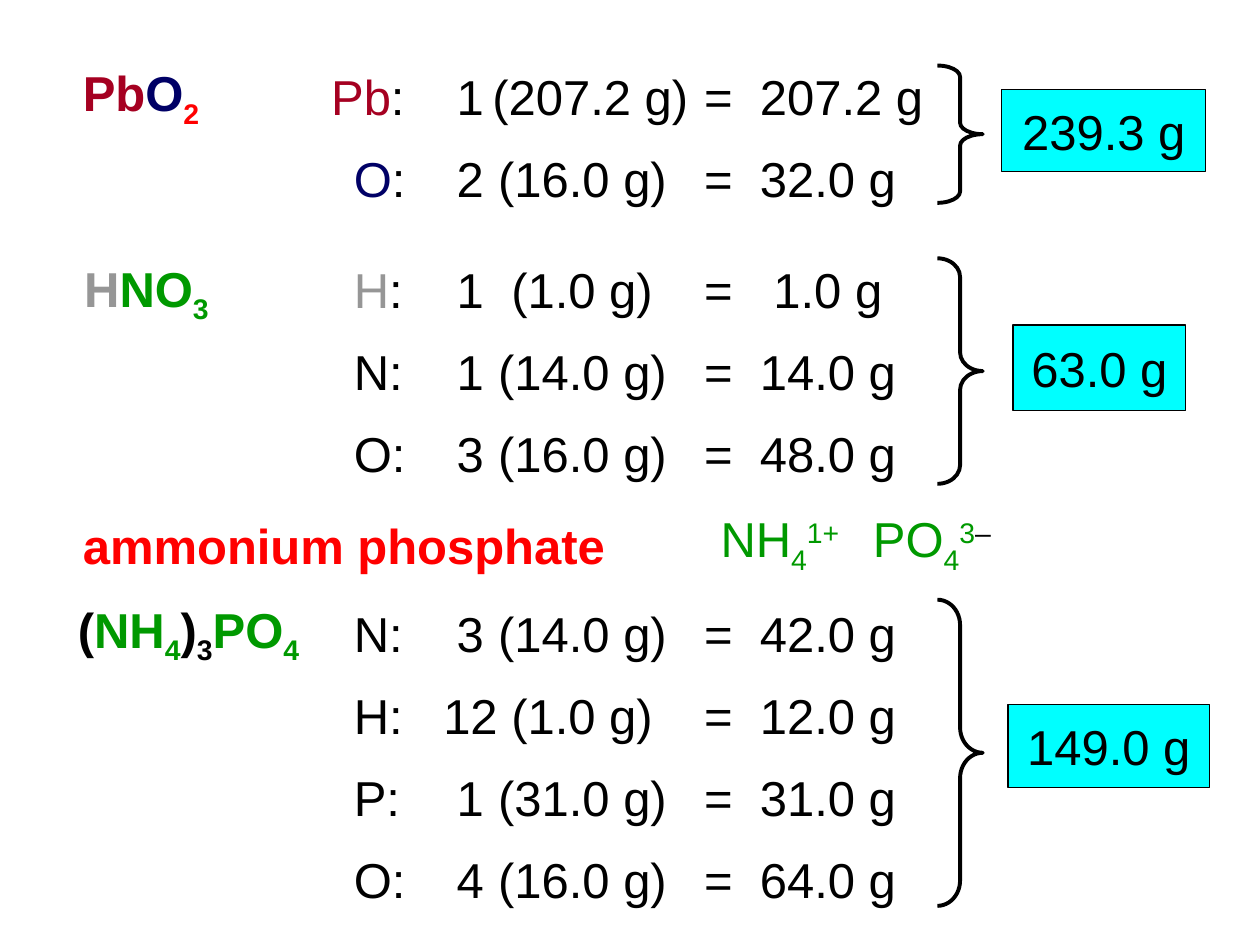
"""Build a slide that works out the molar masses of three compounds."""
from pptx import Presentation
from pptx.dml.color import RGBColor
from pptx.enum.shapes import MSO_SHAPE
from pptx.enum.text import MSO_ANCHOR, PP_ALIGN
from pptx.util import Inches, Pt

COLORS = {"black": "000000", "lead": "A50021", "oxygen": "000066", "red": "FF0000",
          "grey": "969696", "green": "009900", "cyan": "00FFFF"}
SUB, SUPER = -25, 30
ROW_PITCH, ROW_HEIGHT = 0.65, 0.57
CHAR = 0.21
LABEL_RIGHT, COUNT_CENTER, FACTOR_CENTER, FACTOR_MIN, RESULT_LEFT = 3.41, 3.79, 4.68, 3.81, 5.49
BRACE_LEFT, BRACE_WIDTH = 7.44, 0.36

COMPOUNDS = [
    {"formula": [("Pb", "lead"), ("O", "oxygen"), ("2", "red", SUB)],
     "formula_box": (0.56, 0.48, 1.26), "top": 0.48,
     "rows": [([("Pb", "lead"), (":", "black")], "1", "(207.2 g)", "=  207.2 g"),
              ([("O", "oxygen"), (":", "black")], "2", "(16.0 g)", "=  32.0 g")],
     "brace": (0.52, 1.09, 0.252),
     "total": "239.3 g", "total_box": (7.95, 0.71, 1.62, 0.65)},
    {"formula": [("H", "grey"), ("NO", "green"), ("3", "green", SUB)],
     "formula_box": (0.57, 2.03, 1.32), "top": 2.01,
     "rows": [([("H", "grey"), (":", "black")], "1", "(1.0 g)", "=   1.0 g"),
              ([("N:", "black")], "1", "(14.0 g)", "=  14.0 g"),
              ([("O:", "black")], "3", "(16.0 g)", "=  48.0 g")],
     "brace": (2.05, 1.79, 0.413),
     "total": "63.0 g", "total_box": (8.04, 2.58, 1.37, 0.68)},
    {"formula": [("(", "black"), ("NH", "green"), ("4", "green", SUB), (")", "black"),
                 ("3", "black", SUB), ("PO", "green"), ("4", "green", SUB)],
     "formula_box": (0.52, 4.74, 2.27), "top": 4.74,
     "rows": [([("N:", "black")], "3", "(14.0 g)", "=  42.0 g"),
              ([("H:", "black")], "12", "(1.0 g)", "=  12.0 g"),
              ([("P:", "black")], "1", "(31.0 g)", "=  31.0 g"),
              ([("O:", "black")], "4", "(16.0 g)", "=  64.0 g")],
     "brace": (4.76, 2.43, 0.56),
     "total": "149.0 g", "total_box": (8, 5.59, 1.6, 0.66)},
]
COMPOUND_NAME = ([("ammonium phosphate", "red")], 0.56, 4.04, 4.46)
IONS = [
    ([("NH", "green"), ("4", "green", SUB), ("1+", "green", SUPER)], 5.62, 4.02, 1.32),
    ([("PO", "green"), ("4", "green", SUB), ("3", "green", SUPER), ("–", "black", SUPER)],
     6.83, 4.02, 1.2),
]


def rgb(color):
    return RGBColor.from_string(COLORS[color])


def write(frame, pieces, bold=False):
    frame.word_wrap = True
    frame.vertical_anchor = MSO_ANCHOR.MIDDLE
    paragraph = frame.paragraphs[0]
    paragraph.font.name, paragraph.font.size, paragraph.font.bold = "Arial", Pt(28), bold
    for words, color, *baseline in pieces:
        run = paragraph.add_run()
        run.text = words
        run.font.color.rgb = rgb(color)
        if baseline:
            run._r.get_or_add_rPr().set("baseline", str(baseline[0] * 1000))
    return paragraph


def add_text(slide, pieces, left, top, width, bold=False):
    box = slide.shapes.add_textbox(*map(Inches, (left, top, width, ROW_HEIGHT)))
    write(box.text_frame, pieces, bold)


def add_outlined(slide, kind, place, weight):
    shape = slide.shapes.add_shape(kind, *map(Inches, place))
    shape.shadow.inherit = False
    shape.line.color.rgb = rgb("black")
    shape.line.width = Pt(weight)
    return shape


def add_row(slide, top, label, count, factor, result):
    symbol_length = sum(len(piece[0]) for piece in label)
    label_width = 0.7 + 0.18 * (symbol_length - 2)
    count_width = 0.53 + CHAR * (len(count) - 1)
    factor_width = 1.65 + CHAR * (len(factor) - 8)
    result_width = 1.84 + CHAR * (len(result) - 9)
    factor_left = max(FACTOR_CENTER - factor_width / 2, FACTOR_MIN)
    add_text(slide, label, LABEL_RIGHT - label_width, top, label_width)
    for words, left, width in ((count, COUNT_CENTER - count_width / 2, count_width),
                               (factor, factor_left, factor_width),
                               (result, RESULT_LEFT, result_width)):
        add_text(slide, [(words, "black")], left, top, width)


def add_compound(slide, compound):
    add_text(slide, compound["formula"], *compound["formula_box"], bold=True)
    for index, row in enumerate(compound["rows"]):
        add_row(slide, compound["top"] + index * ROW_PITCH, *row)

    brace_top, brace_height, curl = compound["brace"]
    brace = add_outlined(slide, MSO_SHAPE.RIGHT_BRACE,
                         (BRACE_LEFT, brace_top, BRACE_WIDTH, brace_height), 2.25)
    brace.adjustments[0] = curl
    brace.fill.background()

    total = add_outlined(slide, MSO_SHAPE.RECTANGLE, compound["total_box"], 0.75)
    total.fill.solid()
    total.fill.fore_color.rgb = rgb("cyan")
    write(total.text_frame, [(compound["total"], "black")]).alignment = PP_ALIGN.CENTER


def main():
    deck = Presentation()
    deck.slide_width, deck.slide_height = Inches(10), Inches(7.5)
    slide = deck.slides.add_slide(deck.slide_layouts[6])
    for compound in COMPOUNDS:
        add_compound(slide, compound)
    add_text(slide, *COMPOUND_NAME, bold=True)
    for ion in IONS:
        add_text(slide, *ion)
    deck.save("out.pptx")


if __name__ == "__main__":
    main()
